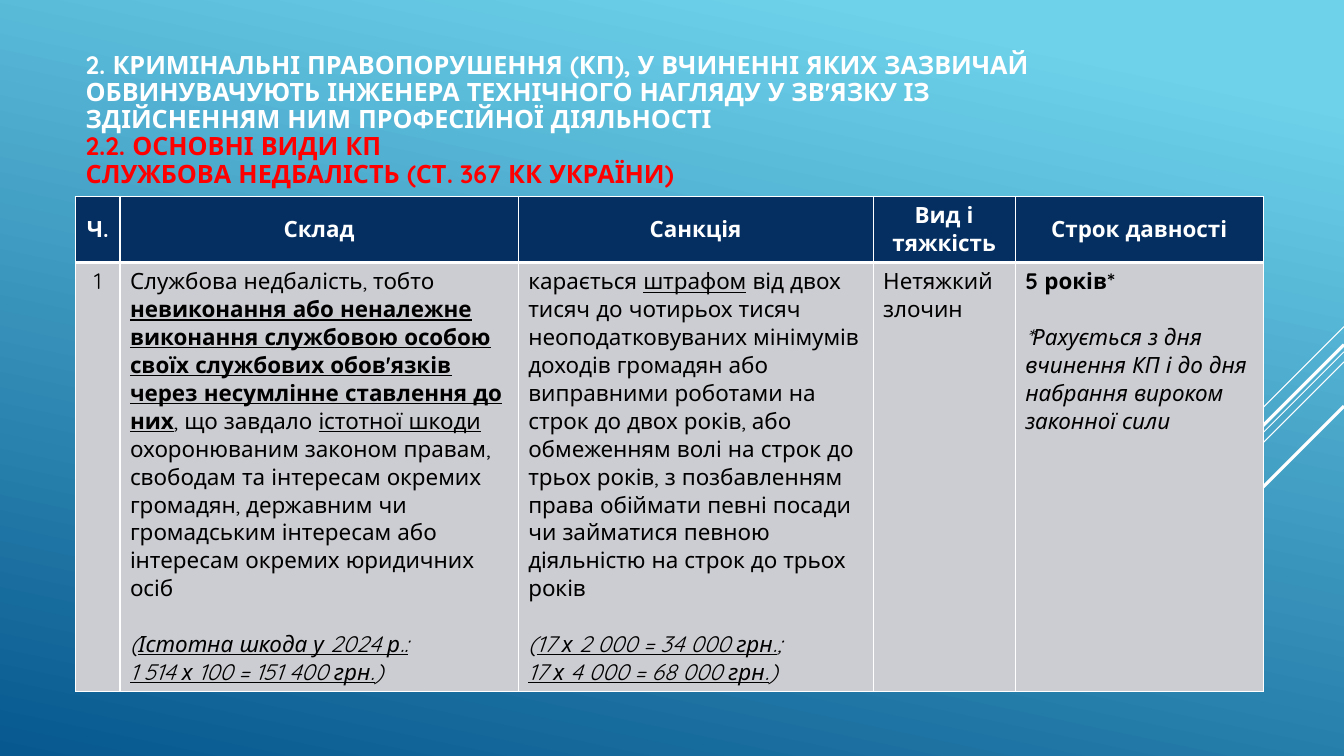
from dataclasses import dataclass

from lxml import etree
from pptx import Presentation
from pptx.dml.color import RGBColor
from pptx.enum.shapes import MSO_CONNECTOR
from pptx.enum.text import MSO_ANCHOR, PP_ALIGN
from pptx.oxml.ns import qn
from pptx.util import Emu, Pt

STRAIGHT = MSO_CONNECTOR.STRAIGHT
MIDDLE, TOP = MSO_ANCHOR.MIDDLE, MSO_ANCHOR.TOP
LEFT, CENTER = PP_ALIGN.LEFT, PP_ALIGN.CENTER
PX = 9144  # 100 px to the inch
FONT = "Quicksand"
WHITE, BLACK, RED = "FFFFFF", "000000", "FF0000"
NAVY, GREY = "052F61", "CCCDD2"


@dataclass(frozen=True)
class Piece:
    """Text with a style made of the letters b, i and u."""
    text: str
    style: str = ""


@dataclass(frozen=True)
class Ray:
    """A diagonal that falls leftwards at 45 degrees from the right edge."""
    top: int
    reach: int
    weight: float


RAYS = [Ray(324, 100, 0.75), Ray(349, 326, 0.75), Ray(359, 207, 0.75),
        Ray(342, 191, 2.25), Ray(403, 139, 2.25)]

TITLE = [
    (WHITE, "2. КРИМІНАЛЬНІ ПРАВОПОРУШЕННЯ (КП), У ВЧИНЕННІ ЯКИХ ЗАЗВИЧАЙ "
            "ОБВИНУВАЧУЮТЬ ІНЖЕНЕРА ТЕХНІЧНОГО НАГЛЯДУ У ЗВ'ЯЗКУ ІЗ"),
    (WHITE, "ЗДІЙСНЕННЯМ НИМ ПРОФЕСІЙНОЇ ДІЯЛЬНОСТІ"),
    (RED, "2.2. ОСНОВНІ ВИДИ КП"),
    (RED, "СЛУЖБОВА НЕДБАЛІСТЬ (СТ. 367 КК УКРАЇНИ)"),
]

COLUMN_WIDTHS = [44, 395, 352, 141, 246]
ROW_HEIGHTS = [65, 408]
HEADERS = ["Ч.", "Склад", "Санкція", "Вид і тяжкість", "Строк давності"]
# Each cell is a list of paragraphs, each paragraph a list of pieces.
DETAILS = [
    [[Piece("1")]],
    [
        [Piece("Службова недбалість, тобто "),
         Piece("невиконання або неналежне виконання службовою особою своїх "
               "службових обов'язків через несумлінне ставлення до них", "bu"),
         Piece(", що завдало "),
         Piece("істотної шкоди ", "u"),
         Piece("охоронюваним законом правам, свободам та інтересам окремих "
               "громадян, державним чи громадським інтересам або інтересам "
               "окремих юридичних осіб")],
        [Piece("(", "i"), Piece("Істотна шкода у 2024 р.:", "iu")],
        [Piece("1 514 х 100 = 151 400 грн.", "iu"), Piece(")", "i")],
    ],
    [
        [Piece("карається "),
         Piece("штрафом", "u"),
         Piece(" від двох тисяч до чотирьох тисяч неоподатковуваних мінімумів "
               "доходів громадян або виправними роботами на строк до двох "
               "років, або обмеженням волі на строк до трьох років, з "
               "позбавленням права обіймати певні посади чи займатися певною "
               "діяльністю на строк до трьох років")],
        [Piece("(", "i"), Piece("17 х 2 000 = 34 000 грн.", "iu"), Piece(";", "i")],
        [Piece("17 х 4 000 = 68 000 грн.", "iu"), Piece(")", "i")],
    ],
    [[Piece("Нетяжкий злочин")]],
    [
        [Piece("5 років*", "b")],
        [Piece("*Рахується з дня вчинення КП і до дня набрання вироком "
               "законної сили", "i")],
    ],
]


def px(length: int) -> Emu:
    return Emu(length * PX)


def rgb(colour: str) -> RGBColor:
    return RGBColor.from_string(colour)


def format_run(run, size: int, colour: str, style: str) -> None:
    font = run.font
    font.name, font.size = FONT, Pt(size)
    font.color.rgb = rgb(colour)
    font.bold, font.italic, font.underline = (flag in style for flag in "biu")


def paint_background(page) -> None:
    fill = page.background.fill
    fill.gradient()
    fill.gradient_angle = 258
    for stop, position, colour in zip(fill.gradient_stops, (0.1, 1),
                                      ("6ED2EB", "06588E")):
        stop.position = position
        stop.color.rgb = rgb(colour)


def draw_ray(page, ray: Ray, right: int) -> None:
    line = page.shapes.add_connector(
        STRAIGHT, px(right), px(ray.top),
        px(right - ray.reach), px(ray.top + ray.reach))
    line.line.color.rgb = rgb(WHITE)
    line.line.width = Pt(ray.weight)
    etree.SubElement(line._element.spPr, qn("a:effectLst"))


def write_title(page) -> None:
    title = page.shapes.title
    title.left, title.top, title.width, title.height = map(px, (75, 44, 1100, 151))
    frame = title.text_frame
    frame.word_wrap = True
    frame.vertical_anchor = MIDDLE
    frame.text = "\v".join(text for _, text in TITLE)
    para = frame.paragraphs[0]
    para.alignment = LEFT
    para.line_spacing = 0.9
    for run, (colour, _) in zip(para.runs, TITLE):
        format_run(run, 18, colour, "b")


def set_borders(cell, bottom: float) -> None:
    properties = cell._tc.get_or_add_tcPr()
    weights = {"a:lnL": 1, "a:lnR": 1, "a:lnT": 1, "a:lnB": bottom}
    for index, (tag, weight) in enumerate(weights.items()):
        line = etree.Element(qn(tag), w=str(Pt(weight)))
        fill = etree.SubElement(line, qn("a:solidFill"))
        etree.SubElement(fill, qn("a:srgbClr"), val=WHITE)
        properties.insert(index, line)


def fill_cell(cell, paragraphs: list[list[Piece]], header: bool,
              alignment: PP_ALIGN) -> None:
    cell.fill.solid()
    cell.fill.fore_color.rgb = rgb(NAVY if header else GREY)
    cell.vertical_anchor = MIDDLE if header else TOP
    set_borders(cell, 3 if header else 1)
    frame = cell.text_frame
    frame.text = "\n".join([""] * len(paragraphs))
    for number, (para, pieces) in enumerate(zip(frame.paragraphs, paragraphs)):
        para.alignment = alignment
        if number == 1:
            para.space_before = Pt(20)
        for piece in pieces:
            run = para.add_run()
            run.text = piece.text
            format_run(run, 16, WHITE if header else BLACK, piece.style)


def add_offence_table(page) -> None:
    table = page.shapes.add_table(
        len(ROW_HEIGHTS), len(COLUMN_WIDTHS), px(75), px(195),
        px(sum(COLUMN_WIDTHS)), px(sum(ROW_HEIGHTS))).table
    table.horz_banding = False
    for column, width in zip(table.columns, COLUMN_WIDTHS):
        column.width = px(width)
    for row, height in zip(table.rows, ROW_HEIGHTS):
        row.height = px(height)
    for index, (header, details) in enumerate(zip(HEADERS, DETAILS)):
        fill_cell(table.cell(0, index), [[Piece(header, "b")]], True, CENTER)
        fill_cell(table.cell(1, index), details, False,
                  LEFT if index else CENTER)


def main() -> None:
    deck = Presentation()
    deck.slide_width, deck.slide_height = px(1333), px(750)
    page = deck.slides.add_slide(deck.slide_layouts[5])
    paint_background(page)
    for ray in RAYS:
        draw_ray(page, ray, 1333)
    write_title(page)
    add_offence_table(page)
    deck.save("out.pptx")


if __name__ == "__main__":
    main()
